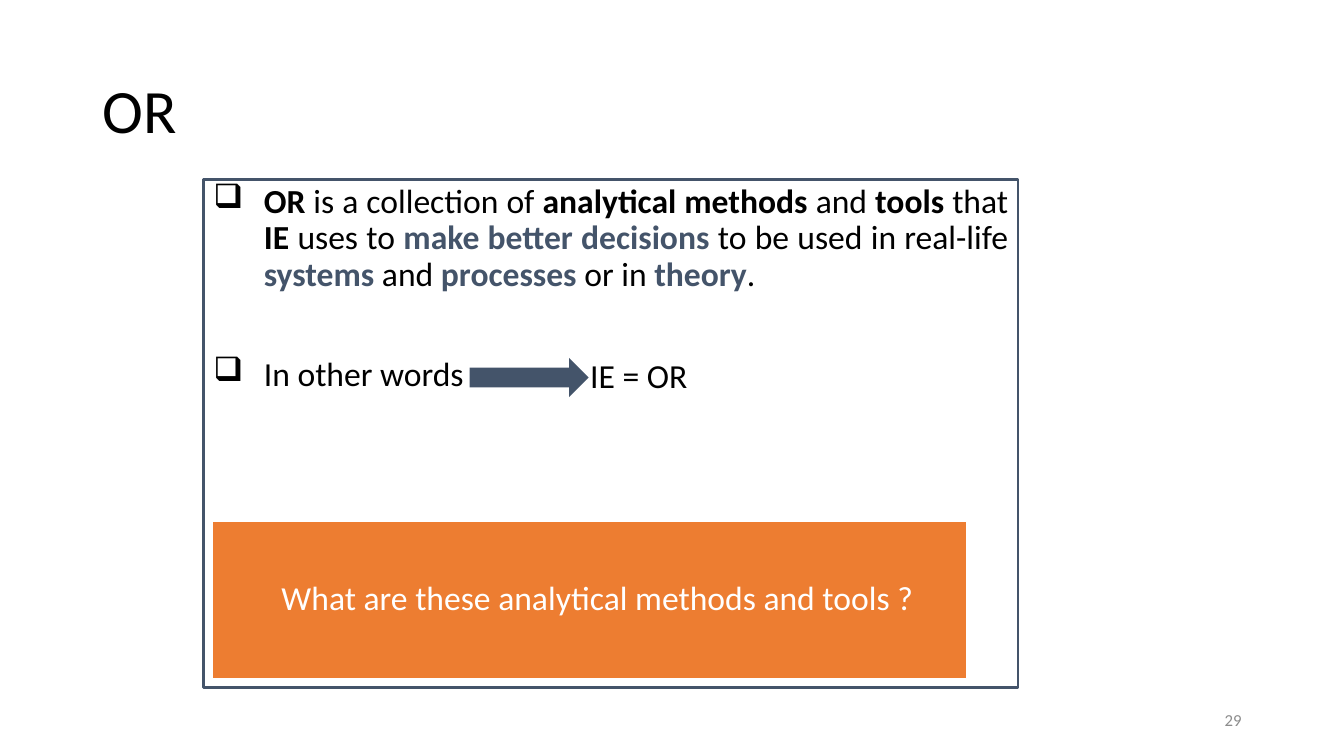
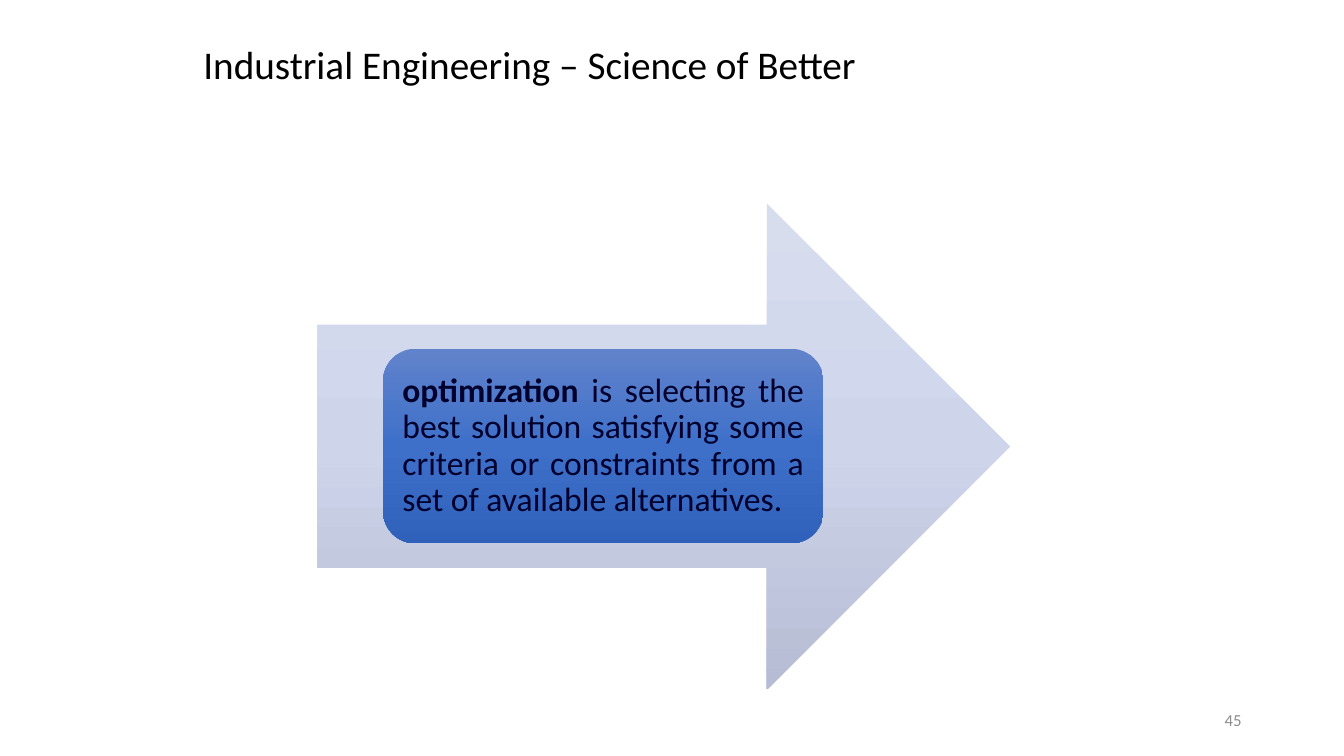
from copy import deepcopy
from dataclasses import dataclass

from lxml.etree import SubElement
from pptx import Presentation
from pptx.dml.color import RGBColor
from pptx.enum.shapes import MSO_SHAPE
from pptx.enum.text import MSO_ANCHOR, PP_ALIGN
from pptx.oxml.ns import qn
from pptx.util import Pt


@dataclass(frozen=True)
class Theme:
    font: str = "Calibri"
    ink: str = "000000"
    slate: str = "44546A"
    orange: str = "ED7D31"
    white: str = "FFFFFF"
    grey: str = "8C8C8C"
    navy: str = "00002C"
    pale_fade: tuple = ("D8DDEE", "CED5EB", "B5BCD3")
    blue_fade: tuple = ("6183CB", "3E70CA", "3062BB")
    heading: int = 44
    subheading: int = 28
    body: int = 24
    number: int = 12
    leading: float = 0.9
    bullet: str = "❑"
    hanging: int = 36


class Deck:
    def __init__(self, theme):
        self.theme = theme
        self.presentation = Presentation()
        self.presentation.slide_width = Pt(960)
        self.presentation.slide_height = Pt(540)
        self.slide = None

    def new_slide(self, title, place, size, number):
        self.slide = self.presentation.slides.add_slide(self.presentation.slide_layouts[6])
        self.label(title, place, size)
        self.label(number, (678, 500.4, 216, 28.8), self.theme.number,
                   self.theme.grey, PP_ALIGN.RIGHT)

    def label(self, text, place, size, color=None, align=PP_ALIGN.LEFT):
        box = self.slide.shapes.add_textbox(*map(Pt, place))
        self.set_text(box, [[text]], size, color or self.theme.ink, align)

    def block(self, preset, place, fill=None, line=None, width=1):
        block = self.slide.shapes.add_shape(preset, *map(Pt, place))
        block.shadow.inherit = False
        if isinstance(fill, tuple):
            self.fade(block, fill)
        elif fill:
            block.fill.solid()
            block.fill.fore_color.rgb = RGBColor.from_string(fill)
        else:
            block.fill.background()
        if line:
            block.line.color.rgb = RGBColor.from_string(line)
            block.line.width = Pt(width)
        else:
            block.line.fill.background()
        return block

    def fade(self, block, colors):
        block.fill.gradient()
        block.fill.gradient_angle = 270
        stops = block.element.spPr.find(qn("a:gradFill")).find(qn("a:gsLst"))
        stops.insert(1, deepcopy(stops[0]))
        for index, (stop, color) in enumerate(zip(block.fill.gradient_stops, colors)):
            stop.position = index / (len(colors) - 1)
            stop.color.rgb = RGBColor.from_string(color)

    def set_text(self, holder, paragraphs, size, color, align,
                 anchor=MSO_ANCHOR.MIDDLE, bullets=False, gaps=None):
        frame = holder.text_frame
        frame.word_wrap = True
        frame.vertical_anchor = anchor
        for index, runs in enumerate(paragraphs):
            paragraph = frame.add_paragraph() if index else frame.paragraphs[0]
            if bullets:
                self.hang(paragraph)
            paragraph.alignment = align
            paragraph.line_spacing = self.theme.leading
            paragraph.space_before = Pt(gaps[index] if gaps else 0)
            paragraph.font.name = self.theme.font
            paragraph.font.size = Pt(size)
            paragraph.font.color.rgb = RGBColor.from_string(color)
            for part in runs:
                text, accent = part if isinstance(part, tuple) else (part, None)
                run = paragraph.add_run()
                run.text = text
                if accent:
                    run.font.bold = True
                    run.font.color.rgb = RGBColor.from_string(accent)

    def hang(self, paragraph):
        properties = paragraph._p.get_or_add_pPr()
        properties.set("marL", str(Pt(self.theme.hanging)))
        properties.set("indent", str(-Pt(self.theme.hanging)))
        SubElement(properties, qn("a:buChar")).set("char", self.theme.bullet)


def add_definition(deck):
    theme = deck.theme
    deck.new_slide("OR", (66, 28.8, 828, 104.4), theme.heading, "29")
    definition = deck.block(MSO_SHAPE.RECTANGLE, (145.4, 128.2, 581.8, 362.9),
                            line=theme.slate, width=2)
    meaning = [
        ("OR", theme.ink), " is a collection of ",
        ("analytical methods ", theme.ink), "and ",
        ("tools ", theme.ink), "that ",
        ("IE ", theme.ink), "uses to ",
        ("make better decisions ", theme.slate), "to be used in real-life ",
        ("systems ", theme.slate), "and ",
        ("processes ", theme.slate), "or in ",
        ("theory", theme.slate), ".",
    ]
    deck.set_text(definition, [meaning, ["In other words"]], theme.body, theme.ink,
                  PP_ALIGN.JUSTIFY, MSO_ANCHOR.TOP, bullets=True, gaps=(10, 46))
    deck.block(MSO_SHAPE.RIGHT_ARROW, (335.5, 255.6, 85, 28.1), theme.slate)
    deck.label("IE = OR", (414.5, 250, 110, 39), theme.body)
    question = deck.block(MSO_SHAPE.RECTANGLE, (151.9, 372.2, 538.6, 112.3),
                          theme.orange, theme.white)
    deck.set_text(question, [["What are these analytical methods and tools ?"]],
                  theme.body, theme.white, PP_ALIGN.CENTER)
    question.text_frame.margin_left = Pt(18)


def add_optimization(deck):
    theme = deck.theme
    deck.new_slide("Industrial Engineering – Science of Better",
                   (138.2, 18, 606.2, 59), theme.subheading, "45")
    deck.block(MSO_SHAPE.RIGHT_ARROW, (226.8, 145.4, 494.6, 347), theme.pale_fade)
    optimization = deck.block(MSO_SHAPE.ROUNDED_RECTANGLE,
                              (273.6, 249.1, 314.6, 139), theme.blue_fade)
    deck.set_text(optimization, [[
        ("optimization", theme.navy),
        " is selecting the best solution satisfying some criteria or constraints "
        "from a set of available alternatives.",
    ]], theme.body, theme.navy, PP_ALIGN.JUSTIFY)


def main():
    deck = Deck(Theme())
    add_definition(deck)
    add_optimization(deck)
    deck.presentation.save("out.pptx")


if __name__ == "__main__":
    main()
